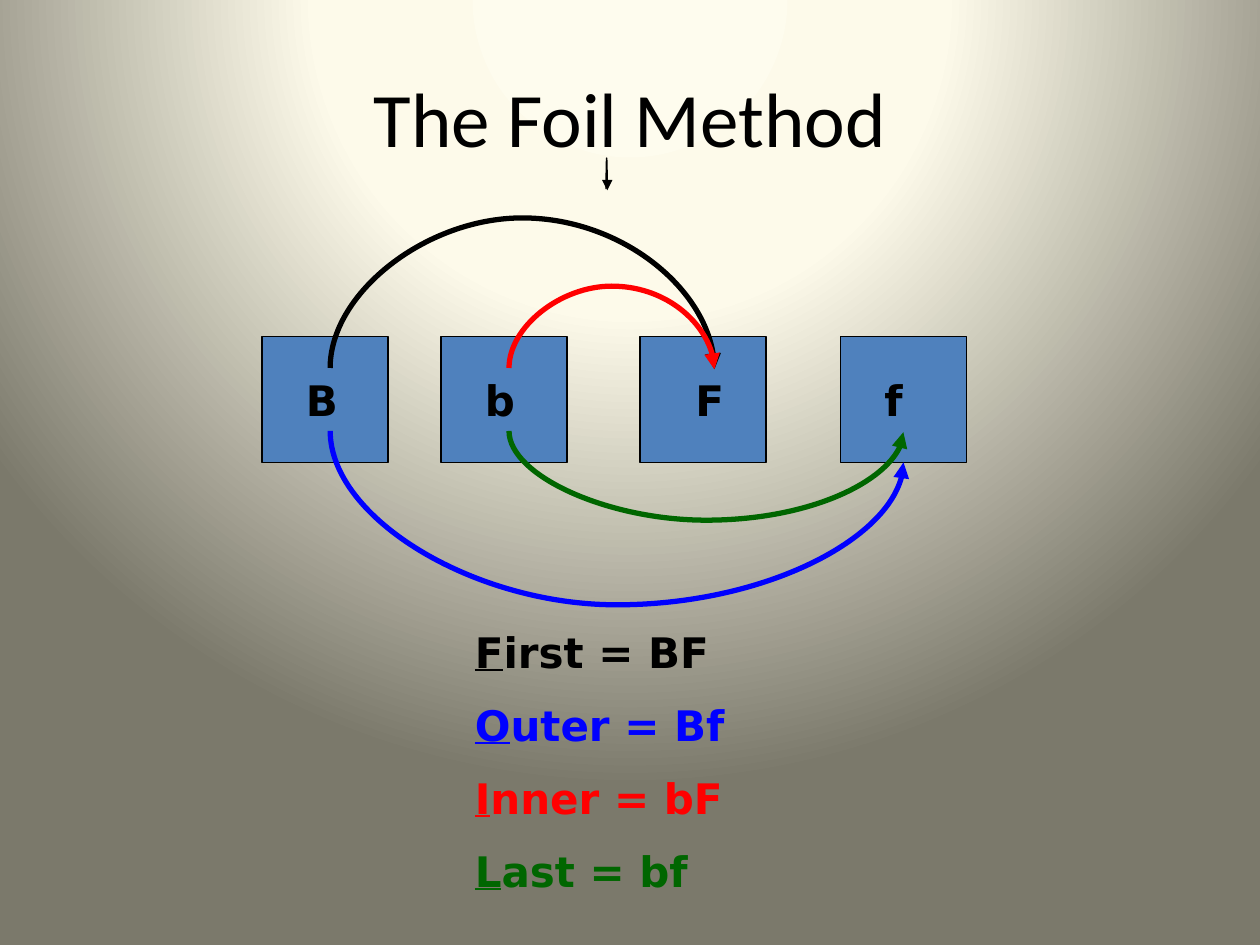
from lxml import etree
from pptx import Presentation
from pptx.dml.color import RGBColor
from pptx.enum import shapes, text
from pptx.oxml import parse_xml
from pptx.oxml.ns import nsdecls, qn
from pptx.util import Inches, Pt

BLACK = RGBColor(0x00, 0x00, 0x00)
BLUE = RGBColor(0x00, 0x00, 0xFF)
RED = RGBColor(0xFF, 0x00, 0x00)
GREEN = RGBColor(0x00, 0x66, 0x00)
TILE = RGBColor(0x4F, 0x81, 0xBD)

TITLE = "The Foil Method"
BACKDROP = [(0, "FEFCEE"), (40, "FDFAEA"), (100, "7B796B")]

# Letter, tile left, letter box left, letter box width
TERMS = [
    ("B", 2.08, 2.33, 0.58),
    ("b", 3.5, 3.75, 0.58),
    ("F", 5.08, 5.42, 0.5),
    ("f", 6.67, 6.92, 0.5),
]
# Start, end, bulge (negative is upward), colour, line width
ARROWS = [
    ((4.81, 1.5), (4.82, 1.51), -0.25, BLACK, 0.75),
    ((2.62, 2.92), (5.67, 2.93), -1.21, BLACK, 3),
    ((4.04, 3.42), (7.17, 3.43), 0.72, GREEN, 3),
    ((2.62, 3.42), (7.17, 3.67), 1.38, BLUE, 3),
    ((4.04, 2.92), (5.67, 2.93), -0.66, RED, 3),
]
PRODUCTS = [
    ("First = BF", BLACK),
    ("Outer = Bf", BLUE),
    ("Inner = bF", RED),
    ("Last = bf", GREEN),
]


def add_text(slide, left, top, width, height):
    box = slide.shapes.add_textbox(
        Inches(left), Inches(top), Inches(width), Inches(height))
    box.text_frame.word_wrap = True
    return box.text_frame


def add_span(para, words, color, size=24, name="DejaVu Sans", bold=True):
    span = para.add_run()
    span.text = words
    span.font.size, span.font.name, span.font.bold = Pt(size), name, bold
    span.font.color.rgb = color
    return span


def paint_backdrop(slide):
    fill = slide.background.fill
    fill.gradient()
    stops = "".join(
        f'<a:gs pos="{place * 1000}"><a:srgbClr val="{color}"/></a:gs>'
        for place, color in BACKDROP)
    gradient = parse_xml(
        f'<a:gradFill {nsdecls("a")} rotWithShape="1"><a:gsLst>{stops}</a:gsLst>'
        '<a:path path="circle">'
        '<a:fillToRect l="50000" t="-80000" r="50000" b="180000"/>'
        '</a:path></a:gradFill>')
    old = next(slide.element.iter(qn("a:gradFill")))
    old.getparent().replace(old, gradient)


def add_arc(slide, start, end, bulge, color, weight):
    """Draw a curved connector turned on its side, so it bulges up or down."""
    (x1, y1), (x2, y2) = start, end
    span, drop = x2 - x1, y2 - y1
    left, top = (x1 + x2 - drop) / 2, (y1 + y2 - span) / 2
    right, bottom = left + drop, top + span
    if bulge < 0:
        ends, turn = (left, bottom, right, top), 90
    else:
        ends, turn = (right, top, left, bottom), 270
    arc = slide.shapes.add_connector(
        shapes.MSO_CONNECTOR.CURVE, *[Inches(value) for value in ends])
    arc.line.color.rgb = color
    arc.line.width = Pt(weight)

    # Turn, bulge, arrowhead and no shadow
    props = arc._element.spPr
    props.find(qn("a:xfrm")).set("rot", str(turn * 60000))
    guides = props.find(qn("a:prstGeom")).get_or_add_avLst()
    etree.SubElement(guides, qn("a:gd"), name="adj1",
                     fmla=f"val {round(bulge / drop * 100000)}")
    etree.SubElement(props.find(qn("a:ln")), qn("a:tailEnd"), type="triangle")
    etree.SubElement(props, qn("a:effectLst"))


def main():
    deck = Presentation()
    deck.slide_width, deck.slide_height = Inches(10), Inches(7.5)
    page = deck.slides.add_slide(deck.slide_layouts[6])
    paint_backdrop(page)

    # Title
    frame = add_text(page, 0.5, 0.3, 9, 1.25)
    frame.vertical_anchor = text.MSO_ANCHOR.MIDDLE
    para = frame.paragraphs[0]
    para.alignment = text.PP_ALIGN.CENTER
    add_span(para, TITLE, BLACK, 44, "Calibri", False)

    # Tiles with their letters
    for letter, tile_left, text_left, text_width in TERMS:
        tile = page.shapes.add_shape(
            shapes.MSO_SHAPE.RECTANGLE, Inches(tile_left), Inches(2.67),
            Inches(1), Inches(1))
        tile.shadow.inherit = False
        tile.fill.solid()
        tile.fill.fore_color.rgb = TILE
        tile.line.color.rgb = BLACK
        tile.line.width = Pt(0.75)
        frame = add_text(page, text_left, 2.92, text_width, 0.5)
        add_span(frame.paragraphs[0], letter, BLACK)

    # Arrows between the letters
    for arrow in ARROWS:
        add_arc(page, *arrow)

    # Products, each with its first letter underlined
    frame = add_text(page, 3.67, 4.92, 2.42, 2.3)
    for index, (words, color) in enumerate(PRODUCTS):
        para = frame.add_paragraph() if index else frame.paragraphs[0]
        if index:
            para.space_before = Pt(13)
        add_span(para, words[0], color).font.underline = True
        add_span(para, words[1:], color)

    deck.save("out.pptx")


if __name__ == "__main__":
    main()
